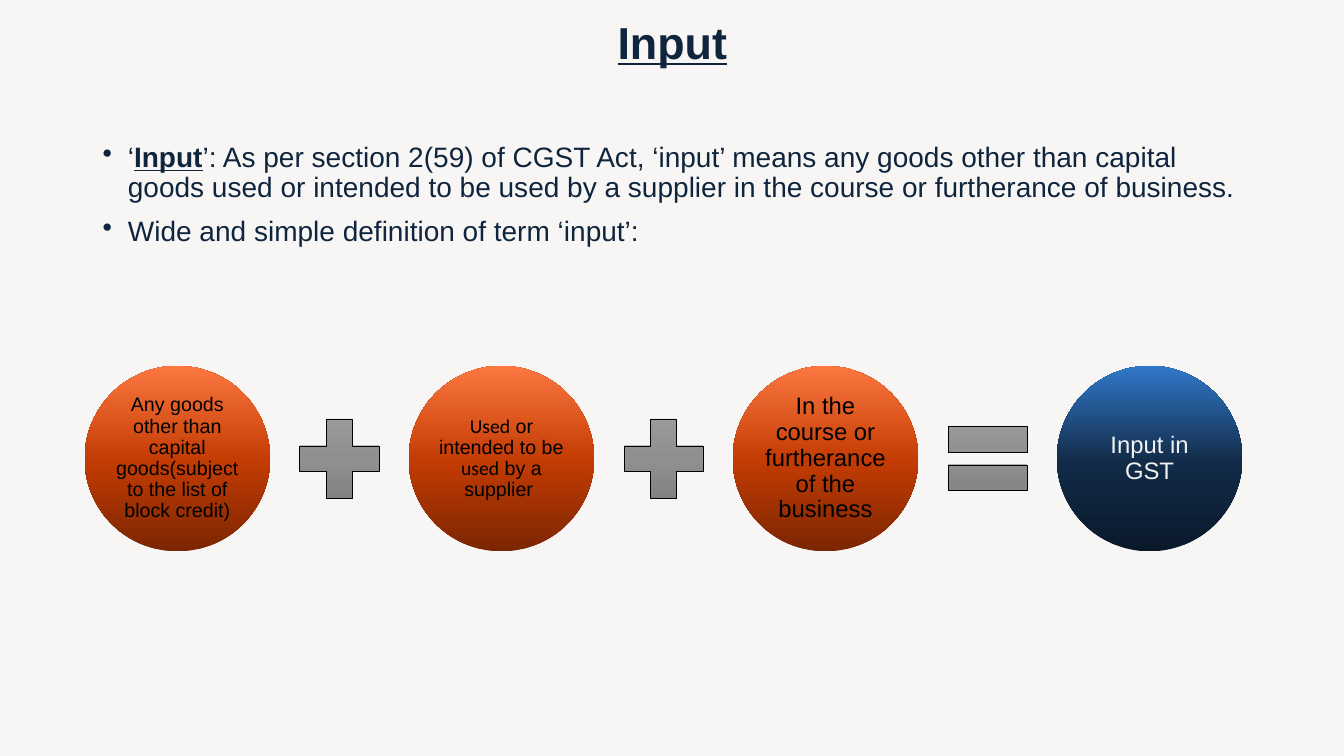
import copy

import pptx
import pptx.dml.color
import pptx.enum.shapes
import pptx.enum.text
import pptx.oxml.ns
import pptx.util
from lxml import etree

COLUMNS, ROWS = 80, 45  # square cells on a 16:9 slide
COLORS = {
    "background": "F8F6F5",
    "navy": "0F253E",
    "black": "000000",
    "pale": "F2F2F2",
}
GRADIENTS = {  # colour by position
    "orange": {0: "7B2602", 0.48: "C23B03", 1: "FC7740"},
    "blue": {0: "0A192A", 0.48: "122B48", 1: "3178C9"},
    "gray": {0: "9D9D9D", 0.5: "909090", 1: "7C7C7C"},
}
SHAPES = pptx.enum.shapes.MSO_SHAPE
CENTER = pptx.enum.text.PP_ALIGN.CENTER
MIDDLE = pptx.enum.text.MSO_ANCHOR.MIDDLE


def rgb(code):
    return pptx.dml.color.RGBColor.from_string(code)


class SlideBuilder:
    def __init__(self, deck, font="Arial"):
        self.font = font
        self.cell_width = deck.slide_width / COLUMNS
        self.cell_height = deck.slide_height / ROWS
        self.slide = deck.slides.add_slide(deck.slide_layouts[6])
        backdrop = self.slide.background.fill
        backdrop.solid()
        backdrop.fore_color.rgb = rgb(COLORS["background"])

    def box(self, column, row, columns, rows):
        return (round(column * self.cell_width), round(row * self.cell_height),
                round(columns * self.cell_width), round(rows * self.cell_height))

    def add_pieces(self, paragraph, pieces, size, color):
        """Each piece is (text, font options)."""
        paragraph.line_spacing = 0.9
        for text, options in pieces:
            run = paragraph.add_run()
            run.text = text
            run.font.size = pptx.util.Pt(size)
            run.font.color.rgb = rgb(COLORS[color])
            run.font.name = options.get("font", self.font)
            run.font.bold = run.font.underline = options.get("strong", False)

    def text_box(self, place):
        frame = self.slide.shapes.add_textbox(*self.box(*place)).text_frame
        frame.word_wrap = True
        return frame

    def heading(self, place, text):
        frame = self.text_box(place)
        frame.vertical_anchor = MIDDLE
        frame.paragraphs[0].alignment = CENTER
        self.add_pieces(frame.paragraphs[0], [(text, {"strong": True})], 32, "navy")

    def bullets(self, place, items):
        frame = self.text_box(place)
        for index, pieces in enumerate(items):
            paragraph = frame.add_paragraph() if index else frame.paragraphs[0]
            self.add_pieces(paragraph, pieces, 20, "navy")
            paragraph.space_before = pptx.util.Pt(10)
            properties = paragraph._p.get_or_add_pPr()
            indent = pptx.util.Inches(0.25)
            properties.set("marL", str(indent))
            properties.set("indent", str(-indent))
            bullet = etree.SubElement(properties, pptx.oxml.ns.qn("a:buChar"))
            bullet.set("char", "•")

    def gradient_shape(self, kind, place, gradient, angle):
        shape = self.slide.shapes.add_shape(kind, *self.box(*place))
        shape.shadow.inherit = False
        shape.fill.gradient()
        shape.fill.gradient_angle = angle
        # The default gradient has two stops; a third is needed
        stops = shape._element.spPr.find(".//" + pptx.oxml.ns.qn("a:gsLst"))
        stops.append(copy.deepcopy(stops[-1]))
        for stop, (position, color) in zip(shape.fill.gradient_stops,
                                           GRADIENTS[gradient].items()):
            stop.position = position
            stop.color.rgb = rgb(color)
        return shape

    def circle(self, place, gradient, pieces, size, color):
        shape = self.gradient_shape(SHAPES.OVAL, place, gradient, 90)
        shape.line.fill.background()
        frame = shape.text_frame
        frame.word_wrap = True
        frame.vertical_anchor = MIDDLE
        frame.margin_left = frame.margin_right = pptx.util.Inches(0.02)
        frame.margin_top = frame.margin_bottom = pptx.util.Inches(0.02)
        frame.paragraphs[0].alignment = CENTER
        self.add_pieces(frame.paragraphs[0], pieces, size, color)

    def operator(self, kind, place):
        shape = self.gradient_shape(kind, place, "gray", 270)
        shape.line.color.rgb = rgb(COLORS["black"])
        shape.line.width = pptx.util.Pt(0.5)


def main():
    deck = pptx.Presentation()
    deck.slide_width = pptx.util.Inches(13.33)
    deck.slide_height = pptx.util.Inches(7.5)
    page = SlideBuilder(deck)

    # Definition
    page.bullets((5.52, 8.22, 69, 28.56), [
        [("‘", {}), ("Input", {"strong": True}),
         ("’: As per section 2(59) of CGST Act, ‘input’ means any goods other "
          "than capital goods used or intended to be used by a supplier in the "
          "course or furtherance of business.", {})],
        [("Wide and simple definition of term ‘input’:", {})],
    ])

    # Equation: condition + condition + condition = input
    calibri = {"font": "Calibri"}
    terms = [
        ("orange", 14, "black", [
            ("Any goods other than capital goods(subject to the list of block "
             "credit)", {})]),
        ("orange", 14, "black", [
            ("Used", calibri), (" or intended to be ", {}),
            ("used", calibri), (" by a supplier ", {})]),
        ("orange", 17, "black", [
            ("In the course or furtherance of the business", {})]),
        ("blue", 17, "pale", [("Input in GST", {})]),
    ]
    operators = [SHAPES.MATH_PLUS, SHAPES.MATH_PLUS, SHAPES.MATH_EQUAL]
    first, pitch, middle = 5.04, 19.29, 27.3
    diameter, operator_size = 11.04, 6.42
    operator_offset = (diameter + pitch - operator_size) / 2
    for index, (gradient, size, color, pieces) in enumerate(terms):
        left = first + index * pitch
        page.circle((left, middle - diameter / 2, diameter, diameter),
                    gradient, pieces, size, color)
        if index < len(operators):
            page.operator(operators[index],
                          (left + operator_offset, middle - operator_size / 2,
                           operator_size, operator_size))

    # Title
    page.heading((5.52, 0.9, 69, 3.54), "Input")

    deck.save("out.pptx")


if __name__ == "__main__":
    main()
